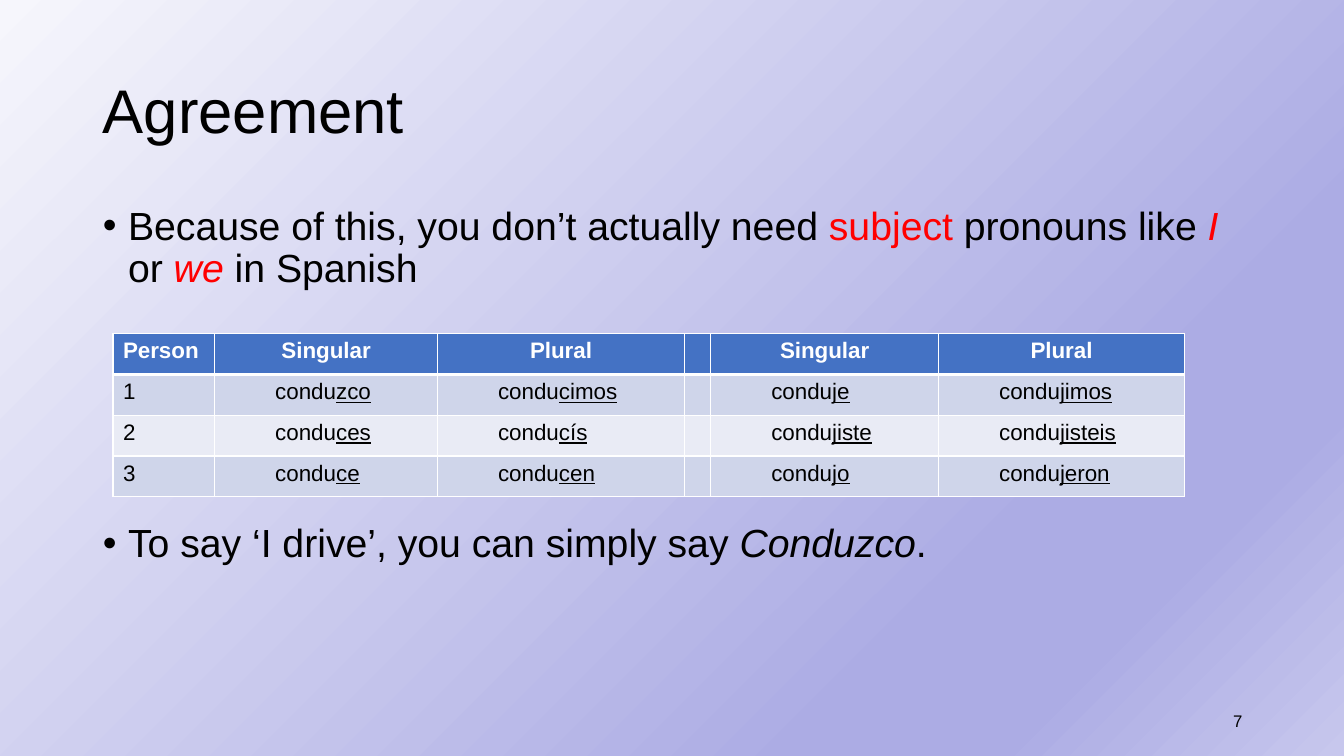
from lxml import etree
from pptx import Presentation
from pptx.dml.color import RGBColor
from pptx.enum import text
from pptx.oxml.ns import qn
from pptx.util import Inches, Pt

BLACK = RGBColor(0x00, 0x00, 0x00)
WHITE = RGBColor(0xFF, 0xFF, 0xFF)
RED = RGBColor(0xFF, 0x00, 0x00)
HEADER_BLUE = RGBColor(0x44, 0x72, 0xC4)
BANDS = [RGBColor(0xCF, 0xD5, 0xEA), RGBColor(0xE9, 0xEB, 0xF5)]
BACKGROUND = [
    (0, RGBColor(0xF6, 0xF6, 0xFC)),
    (74, RGBColor(0xAC, 0xAC, 0xE4)),
    (83, RGBColor(0xAC, 0xAC, 0xE4)),
    (100, RGBColor(0xC7, 0xC7, 0xED)),
]


def add_run(p, words, size, color=BLACK, bold=False, italic=False, underline=False):
    r = p.add_run()
    r.text = words
    r.font.name = "Arial"
    r.font.size = Pt(size)
    r.font.color.rgb = color
    r.font.bold = bold
    r.font.italic = italic
    r.font.underline = underline


def set_borders(cell, bottom, top):
    """Draw white cell borders; bottom and top are widths in points."""
    tcPr = cell._tc.get_or_add_tcPr()
    sides = [("lnL", 1), ("lnR", 1), ("lnT", top), ("lnB", bottom)]
    for i, (side, width) in enumerate(sides):
        ln = etree.Element(qn("a:" + side), w=str(Pt(width)))
        fill = etree.SubElement(ln, qn("a:solidFill"))
        etree.SubElement(fill, qn("a:srgbClr"), val=str(WHITE))
        tcPr.insert(i, ln)


prs = Presentation()
prs.slide_width = Inches(13.33)
prs.slide_height = Inches(7.5)
s = prs.slides.add_slide(prs.slide_layouts[1])

# Background gradient
fill = s.background.fill
fill.gradient()
fill.gradient_angle = 315
stops = s.background._cSld.find(".//" + qn("a:gsLst"))
for stop in list(stops):
    stops.remove(stop)
for percent, color in BACKGROUND:
    stop = etree.SubElement(stops, qn("a:gs"), pos=str(percent * 1000))
    etree.SubElement(stop, qn("a:srgbClr"), val=str(color))

# Title
title = s.shapes.title
title.left, title.top = Inches(0.92), Inches(0.4)
title.width, title.height = Inches(11.5), Inches(1.45)
tf = title.text_frame
tf.auto_size = text.MSO_AUTO_SIZE.NONE
tf.vertical_anchor = text.MSO_ANCHOR.MIDDLE
p = tf.paragraphs[0]
p.alignment = text.PP_ALIGN.LEFT
p.line_spacing = 0.9
add_run(p, "Agreement", 44)

# Bullets, with room for the table between them
body = s.placeholders[1]
body.left, body.top = Inches(0.92), Inches(2)
body.width, body.height = Inches(11.5), Inches(4.76)
tf = body.text_frame
tf.auto_size = text.MSO_AUTO_SIZE.NONE
bullets = [
    (10, [
        ("Because of this, you don’t actually need ", BLACK, False),
        ("subject", RED, False),
        (" pronouns like ", BLACK, False),
        ("I", RED, True),
        (" or ", BLACK, False),
        ("we", RED, True),
        (" in Spanish", BLACK, False),
    ]),
    (166, [
        ("To say ‘I drive’, you can simply say ", BLACK, False),
        ("Conduzco", BLACK, True),
        (".", BLACK, False),
    ]),
]
for i, (space_before, runs) in enumerate(bullets):
    p = tf.paragraphs[0] if i == 0 else tf.add_paragraph()
    p.line_spacing = 0.9
    p.space_before = Pt(space_before)
    pPr = p._p.get_or_add_pPr()
    pPr.set("marL", str(Inches(0.25)))
    pPr.set("indent", str(-Inches(0.25)))
    etree.SubElement(pPr, qn("a:buChar"), char="•")
    for words, color, italic in runs:
        add_run(p, words, 28, color, italic=italic)

# Slide number
number = s.shapes.add_textbox(Inches(9.42), Inches(6.95), Inches(3), Inches(0.4))
tf = number.text_frame
tf.word_wrap = True
tf.vertical_anchor = text.MSO_ANCHOR.MIDDLE
p = tf.paragraphs[0]
p.alignment = text.PP_ALIGN.RIGHT
add_run(p, "7", 12)

# Conjugation table: endings by person, with an empty column between tenses
headers = ["Person", "Singular", "Plural", "", "Singular", "Plural"]
endings = [
    ["zco", "cimos", "", "je", "jimos"],
    ["ces", "cís", "", "jiste", "jisteis"],
    ["ce", "cen", "", "jo", "jeron"],
]
widths = [1.01, 2.21, 2.45, 0.26, 2.26, 2.44]
table = s.shapes.add_table(
    len(endings) + 1, len(headers),
    Inches(1.12), Inches(3.31), Inches(sum(widths)), Inches(1.62),
).table
for column, width in zip(table.columns, widths):
    column.width = Inches(width)
for row in table.rows:
    row.height = Inches(0.405)

for col, header in enumerate(headers):
    cell = table.cell(0, col)
    cell.fill.solid()
    cell.fill.fore_color.rgb = HEADER_BLUE
    set_borders(cell, bottom=3, top=1)
    if header:
        p = cell.text_frame.paragraphs[0]
        if col > 0:
            p.alignment = text.PP_ALIGN.CENTER
        add_run(p, header, 16, WHITE, bold=True)

for person, row_endings in enumerate(endings, start=1):
    for col, ending in enumerate([str(person)] + row_endings):
        cell = table.cell(person, col)
        cell.fill.solid()
        cell.fill.fore_color.rgb = BANDS[(person - 1) % 2]
        set_borders(cell, bottom=1, top=3 if person == 1 else 1)
        p = cell.text_frame.paragraphs[0]
        if col == 0:
            add_run(p, ending, 16)
        elif ending:
            add_run(p, "\tcondu", 16)
            add_run(p, ending, 16, underline=True)

prs.save("out.pptx")
